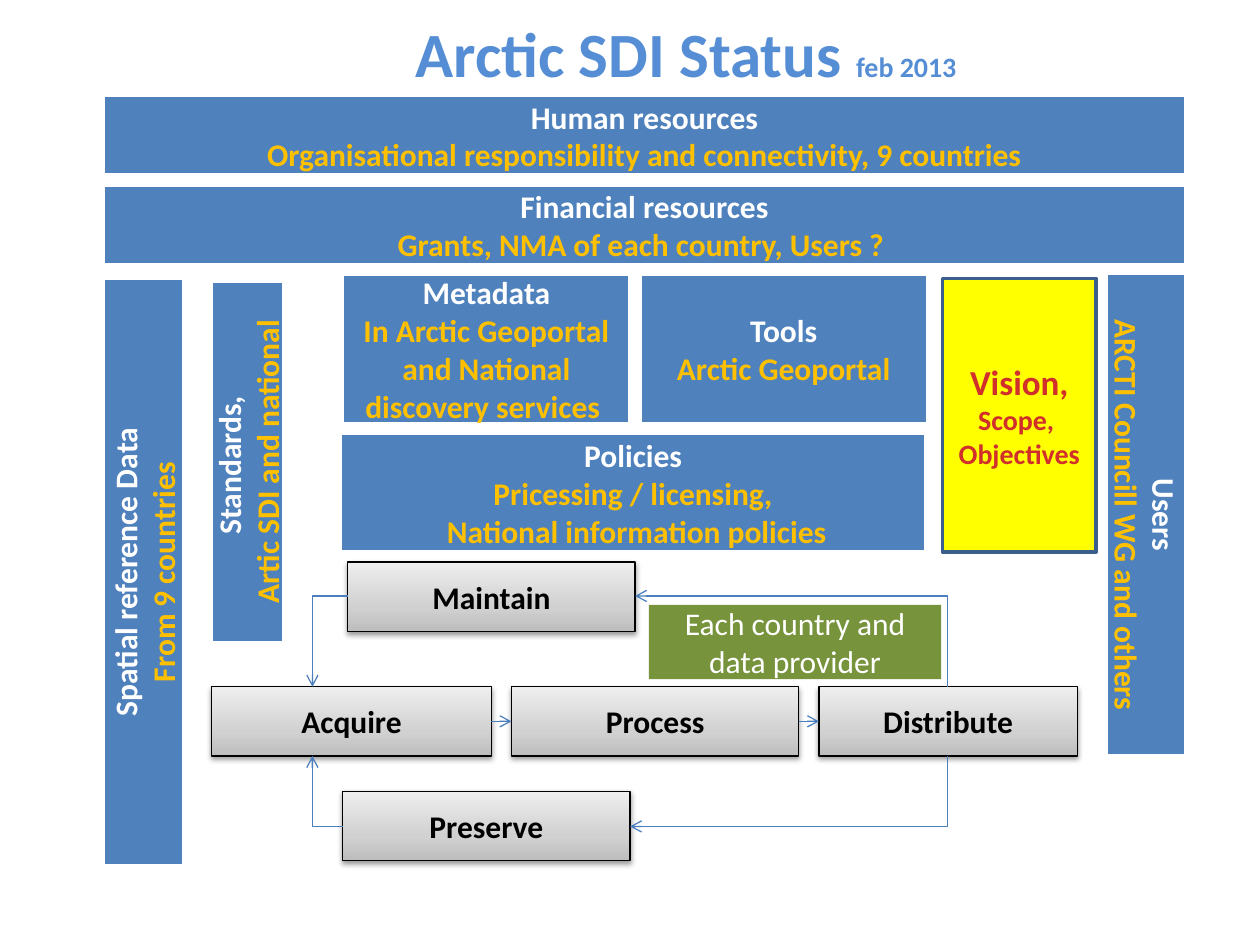
from copy import deepcopy

from lxml.etree import SubElement
from pptx import Presentation
from pptx.dml.color import RGBColor as RGB
from pptx.enum.shapes import MSO_CONNECTOR as LINK, MSO_SHAPE as SHAPE
from pptx.enum.text import MSO_ANCHOR as ANCHOR, PP_ALIGN as ALIGN
from pptx.oxml.ns import qn
from pptx.util import Pt

PX = 9144  # 100 px to the inch
HEX = {
    "blue": "4F81BD", "white": "FFFFFF", "gold": "FFC000", "black": "000000",
    "link": "4B7EBC", "title": "558ED5", "green": "77933C", "yellow": "FFFF00",
    "navy": "3A5F8C", "red": "D02F2C", "dark": "BDBDBD", "mid": "D1D1D1",
    "light": "EEEEEE",
}
RGBS = {name: RGB.from_string(code) for name, code in HEX.items()}

deck = Presentation()
deck.slide_width, deck.slide_height = 1000 * PX, 750 * PX
slide = deck.slides.add_slide(deck.slide_layouts[6])
shapes = slide.shapes


def write(shape, text, hues, size=18, bold=True):
    """Fill a shape with centred lines, one hue each; the last hue repeats."""
    frame = shape.text_frame
    frame.text = text
    frame.word_wrap = True
    frame.vertical_anchor = ANCHOR.MIDDLE
    for i, para in enumerate(frame.paragraphs):
        para.alignment = ALIGN.CENTER
        font = para.runs[0].font
        font.name, font.size, font.bold = "Calibri", Pt(size), bold
        font.color.rgb = RGBS[hues[min(i, len(hues) - 1)]]


def block(spot, fill, line=None, width=2):
    shape = shapes.add_shape(SHAPE.RECTANGLE, *[n * PX for n in spot])
    shape.shadow.inherit = False
    if fill:
        shape.fill.solid()
        shape.fill.fore_color.rgb = RGBS[fill]
    if line:
        shape.line.color.rgb = RGBS[line]
        shape.line.width = Pt(width)
    else:
        shape.line.fill.background()
    return shape


# Blue parts of the infrastructure
parts = [
    ((-119, 422, 466, 64), 270, "Spatial reference Data\nFrom 9 countries"),
    ((272, 218, 228, 118), 0,
     "Metadata\nIn Arctic Geoportal and National discovery services "),
    ((53, 338, 287, 57), 270, "Standards, \nArtic SDI and national"),
    ((508, 218, 228, 118), 0, "Tools\nArctic Geoportal"),
    ((270, 344, 465, 94), 0,
     "Policies\nPricessing / licensing,\n National information policies"),
    ((718, 377, 383, 63), 90, "Users\nARCTI Councill WG and others"),
    ((82, 76, 859, 63), 0,
     "Human resources\nOrganisational responsibility and connectivity, 9 countries"),
    ((82, 147, 859, 63), 0,
     "Financial resources\nGrants, NMA of each country, Users ? "),
]
for spot, turn, text in parts:
    part = block(spot, "blue", "white")
    part.rotation = turn
    write(part, text, ["white", "gold"])

# Grey steps of the data flow
steps = {}
for name, x, y, w in [("Acquire", 168, 545, 222), ("Maintain", 276, 446, 228),
                      ("Process", 406, 545, 228), ("Distribute", 650, 545, 205),
                      ("Preserve", 272, 628, 228)]:
    step = steps[name] = block((x, y, w, 55), None, "black", 0.75)
    step.fill.gradient()
    step.fill.gradient_angle = 90
    props = step._element.spPr
    stops = props.find(".//" + qn("a:gsLst"))
    stops.insert(1, deepcopy(stops[0]))
    for stop, hue, place in zip(step.fill.gradient_stops,
                                ["dark", "mid", "light"], [0, 0.35, 1]):
        stop.color.rgb = RGBS[hue]
        stop.position = place
    shade = SubElement(props.find(qn("a:effectLst")), qn("a:outerShdw"),
                       blurRad="40000", dist="20000", dir="5400000", rotWithShape="0")
    tint = SubElement(shade, qn("a:srgbClr"), val=HEX["black"])
    SubElement(tint, qn("a:alpha"), val="38000")
    write(step, name, ["black"])

# Arrows; each corner link leaves its first point sideways
arrows = [
    (LINK.ELBOW, (390, 572, 406, 573), "tailEnd", ("Acquire", "Process")),
    (LINK.STRAIGHT, (634, 573, 650, 572), "tailEnd", ("Process", "Distribute")),
    (LINK.ELBOW, (504, 473, 752, 545), "headEnd", None),
    (LINK.ELBOW, (276, 473, 248, 545), "tailEnd", None),
    (LINK.ELBOW, (500, 656, 752, 600), "headEnd", None),
    (LINK.ELBOW, (272, 656, 248, 600), "tailEnd", None),
]
for kind, ends, tip, pair in arrows:
    arrow = shapes.add_connector(kind, *[n * PX for n in ends])
    arrow.line.color.rgb = RGBS["link"]
    arrow.line.width = Pt(0.75)
    props = arrow._element.spPr
    SubElement(props.find(qn("a:ln")), qn(f"a:{tip}"), type="arrow")
    SubElement(props, qn("a:effectLst"))
    if pair:
        arrow.begin_connect(steps[pair[0]], 3)
        arrow.end_connect(steps[pair[1]], 1)
    else:
        props.find(qn("a:prstGeom")).set("prst", "bentConnector2")

# Title
title = shapes.add_textbox(*[n * PX for n in (224, 23, 646, 37)])
write(title, "Arctic SDI Status ", ["title"], 36)

# Provider note
note = block((515, 480, 232, 59), "green")
write(note, "Each country and data provider", ["white"], bold=False)

# Vision
vision = block((748, 221, 122, 217), "yellow", "navy")
write(vision, "Vision, \nObjectives", ["red"], 16)
vision.text_frame.paragraphs[0].runs[0].font.size = Pt(20)

# Smaller words that follow on the first line
for shape, text, hue in [(title, "feb 2013 ", "title"), (vision, "Scope, ", "red")]:
    run = shape.text_frame.paragraphs[0].add_run()
    run.text = text
    font = run.font
    font.name, font.size, font.bold = "Calibri", Pt(16), True
    font.color.rgb = RGBS[hue]

deck.save("out.pptx")
